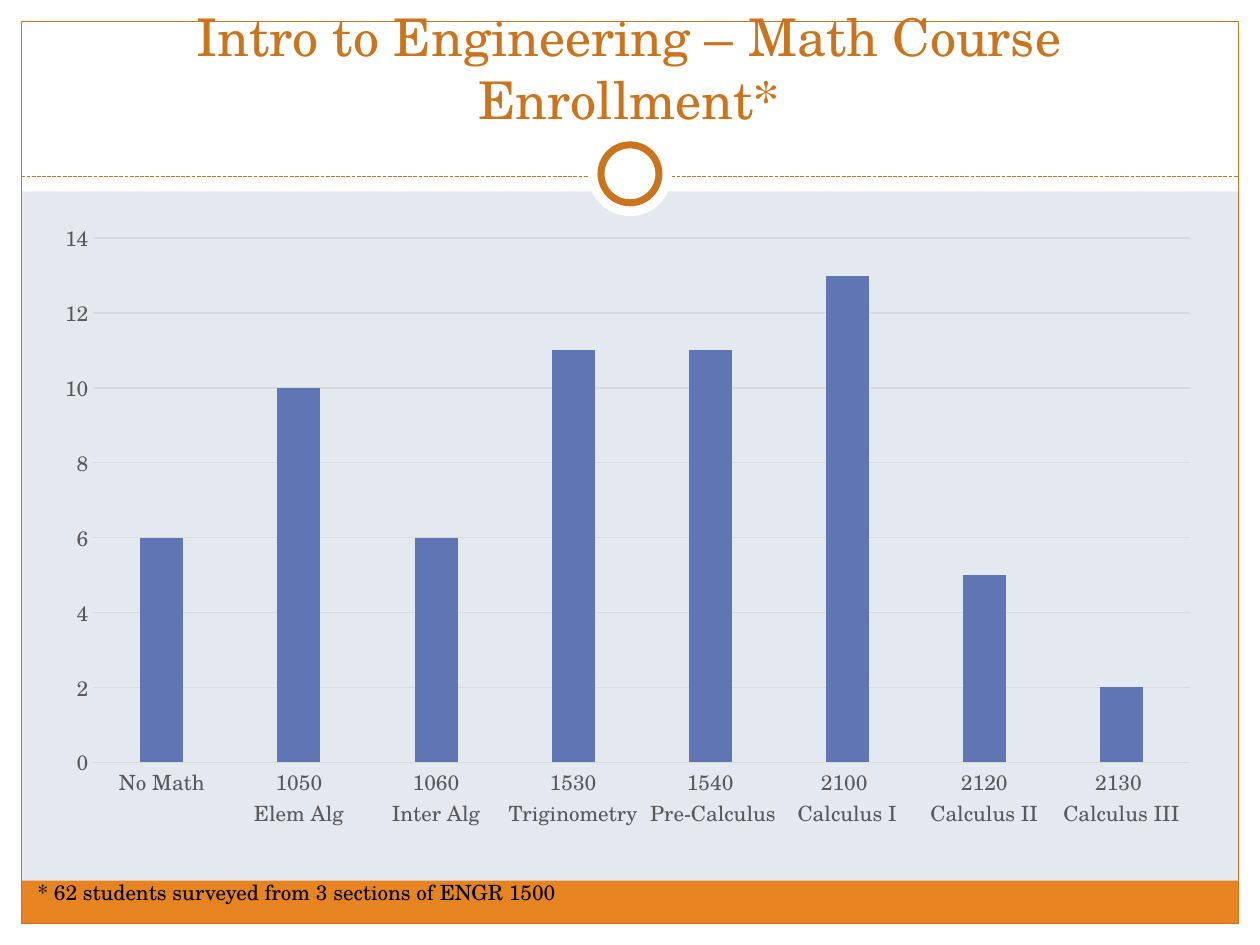
from lxml import etree
from pptx import Presentation
from pptx.chart.data import CategoryChartData
from pptx.dml.color import RGBColor
from pptx.enum.chart import XL_CHART_TYPE as ChartType, XL_TICK_MARK as TickMark
from pptx.enum.dml import MSO_LINE as LineDash
from pptx.enum.shapes import MSO_CONNECTOR as Connector, MSO_SHAPE as Shape
from pptx.enum.text import MSO_ANCHOR as Anchor, PP_ALIGN as Align
from pptx.oxml.ns import qn
from pptx.util import Inches, Pt

WIDTH, HEIGHT, MARGIN = 10, 7.5, 0.17
HEADER_HEIGHT, DIVIDER_Y = 1.52, 1.4
FONT = "TeX Gyre Schola"
WHITE, BLACK, ORANGE, RUST = "FFFFFF", "000000", "E68422", "CB741E"
BLUE, GRAY, GRID, BACKGROUND = "6076B4", "595959", "D9D9D9", "E4E9EF"

ENROLLMENT = {
    "No Math": 6,
    "1050\nElem Alg": 10,
    "1060\nInter Alg": 6,
    "1530\nTriginometry": 11,
    "1540\n Pre-Calculus": 11,
    "2100 \nCalculus I": 13,
    "2120\nCalculus II": 5,
    "2130 \nCalculus III": 2,
}


def color(value):
    return RGBColor.from_string(value)


def inches(box):
    return [Inches(length) for length in box]


def set_font(font, size, value):
    for name, setting in {"name": FONT, "size": Pt(size), "bold": False}.items():
        setattr(font, name, setting)
    font.color.rgb = color(value)


def set_line(line, value, width):
    line.color.rgb = color(value)
    line.width = Pt(width)


def add_block(slide, kind, box, fill=None, line=None, width=0.75):
    shape = slide.shapes.add_shape(kind, *inches(box))
    shape.shadow.inherit = False
    if fill:
        shape.fill.solid()
        shape.fill.fore_color.rgb = color(fill)
    else:
        shape.fill.background()
    if line:
        set_line(shape.line, line, width)
    else:
        shape.line.fill.background()


def add_circle(slide, center_x, center_y, size, **style):
    box = (center_x - size / 2, center_y - size / 2, size, size)
    add_block(slide, Shape.OVAL, box, WHITE, **style)


def add_frame(slide):
    """White margins, footer band, outline and divider with its ring."""
    right, bottom = WIDTH - MARGIN, HEIGHT - MARGIN
    inner_width = WIDTH - 2 * MARGIN
    for box in (
        (0, bottom, WIDTH, MARGIN),
        (0, 0, WIDTH, HEADER_HEIGHT),
        (0, 0, MARGIN, HEIGHT),
        (right, 0, MARGIN, HEIGHT),
    ):
        add_block(slide, Shape.RECTANGLE, box, WHITE)
    add_block(slide, Shape.RECTANGLE, (MARGIN, bottom - 0.34, inner_width, 0.34), ORANGE)
    add_block(slide, Shape.RECTANGLE,
              (MARGIN, MARGIN, inner_width, HEIGHT - 2 * MARGIN), line=RUST)

    divider = slide.shapes.add_connector(
        Connector.STRAIGHT, *inches((MARGIN, DIVIDER_Y, right, DIVIDER_Y)))
    set_line(divider.line, RUST, 0.75)
    divider.line.dash_style = LineDash.SQUARE_DOT
    properties = divider._element.spPr
    properties.find(qn("a:ln")).find(qn("a:prstDash")).set("val", "sysDash")
    etree.SubElement(properties, qn("a:effectLst"))

    ring_y = DIVIDER_Y - 0.02
    add_circle(slide, WIDTH / 2, ring_y, 0.67)
    add_circle(slide, WIDTH / 2, ring_y, 0.46, line=RUST, width=4)


def add_text(slide, box, text, size, value, align=Align.LEFT, anchor=Anchor.TOP):
    frame = slide.shapes.add_textbox(*inches(box)).text_frame
    frame.word_wrap = True
    frame.vertical_anchor = anchor
    paragraph = frame.paragraphs[0]
    paragraph.alignment = align
    run = paragraph.add_run()
    run.text = text
    set_font(run.font, size, value)


def add_enrollment_chart(slide, box):
    data = CategoryChartData()
    data.categories = list(ENROLLMENT)
    data.add_series("Series 1", list(ENROLLMENT.values()))
    chart = slide.shapes.add_chart(ChartType.COLUMN_CLUSTERED, *inches(box), data).chart
    chart.has_legend = chart.has_title = False
    set_font(chart.font, 10, BLACK)

    plot = chart.plots[0]
    for name, setting in {"gap_width": 219, "overlap": -27,
                          "vary_by_categories": False}.items():
        setattr(plot, name, setting)
    columns = plot.series[0].format.fill
    columns.solid()
    columns.fore_color.rgb = color(BLUE)

    for axis in (chart.category_axis, chart.value_axis):
        axis.major_tick_mark = axis.minor_tick_mark = TickMark.NONE
        set_font(axis.tick_labels.font, 12, GRAY)
    set_line(chart.category_axis.format.line, GRID, 0.75)
    chart.value_axis.format.line.fill.background()
    for name, setting in {"minimum_scale": 0, "maximum_scale": 14, "major_unit": 2,
                          "has_major_gridlines": True}.items():
        setattr(chart.value_axis, name, setting)
    set_line(chart.value_axis.major_gridlines.format.line, GRID, 0.75)


def main():
    presentation = Presentation()
    presentation.slide_width, presentation.slide_height = inches((WIDTH, HEIGHT))
    slide = presentation.slides.add_slide(presentation.slide_layouts[6])
    slide.background.fill.solid()
    slide.background.fill.fore_color.rgb = color(BACKGROUND)

    add_frame(slide)
    add_text(slide, (0.33, 0.25, 9.33, 0.83),
             "Intro to Engineering – Math Course Enrollment*",
             29.7, RUST, Align.CENTER, Anchor.BOTTOM)
    add_enrollment_chart(slide, (0.33, 1.67, 9.3, 5))
    add_text(slide, (0.2, 6.93, 6.48, 0.3),
             "* 62 students surveyed from 3 sections of ENGR 1500", 12, BLACK)
    presentation.save("out.pptx")


if __name__ == "__main__":
    main()
